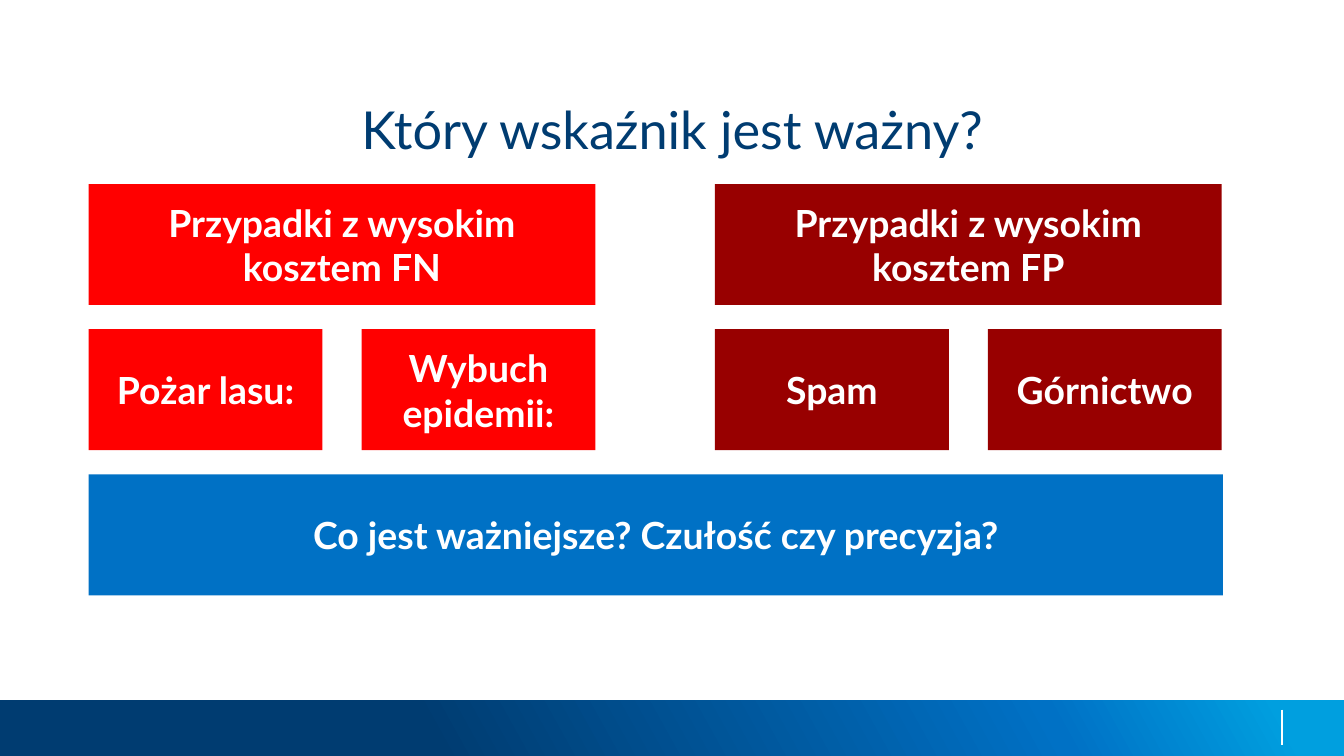
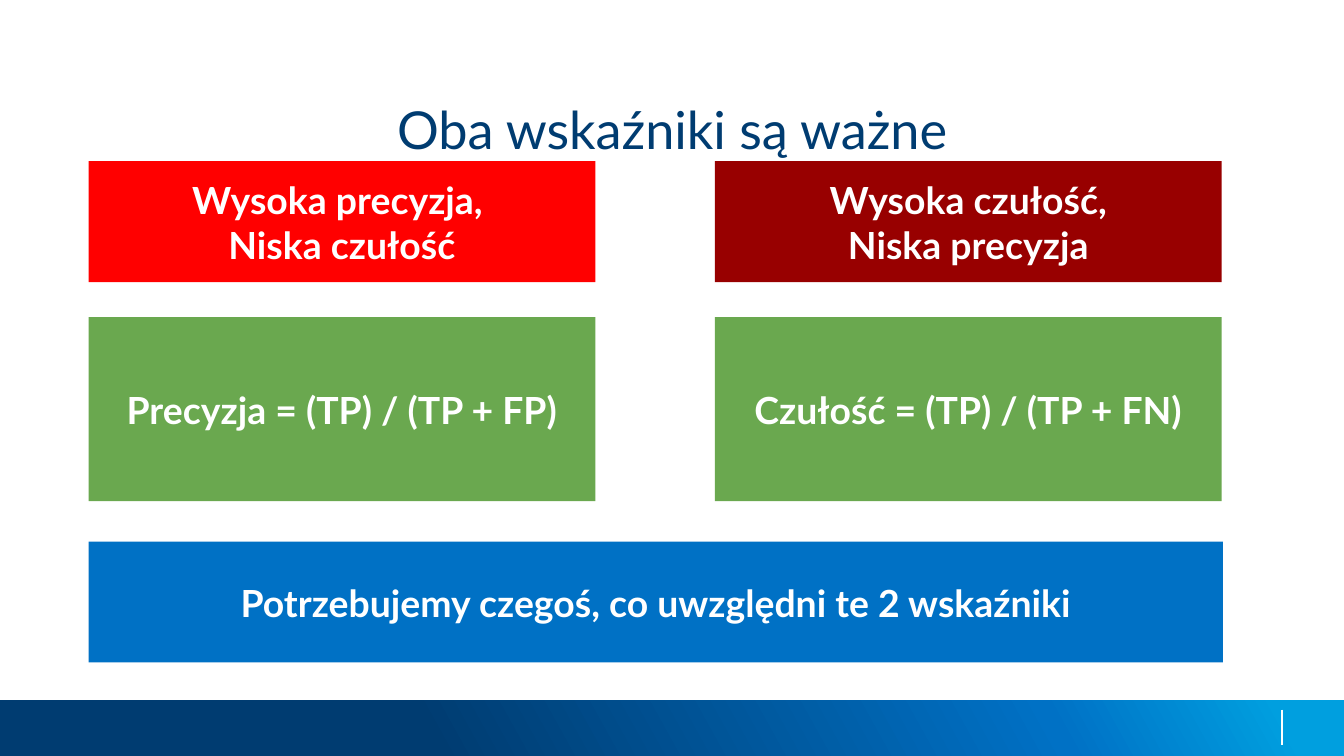
"""Build two slides about choosing between recall and precision."""
from copy import deepcopy
from dataclasses import dataclass

from lxml import etree
from pptx import Presentation
from pptx.dml.color import RGBColor
from pptx.enum.shapes import MSO_CONNECTOR, MSO_SHAPE
from pptx.enum.text import MSO_ANCHOR, MSO_AUTO_SIZE, PP_ALIGN
from pptx.oxml.ns import qn
from pptx.util import Inches, Pt

RECT = MSO_SHAPE.RECTANGLE
STRAIGHT = MSO_CONNECTOR.STRAIGHT
CENTER = PP_ALIGN.CENTER
MIDDLE, BOTTOM = MSO_ANCHOR.MIDDLE, MSO_ANCHOR.BOTTOM
NO_FIT = MSO_AUTO_SIZE.NONE

COLORS = {
    "navy": "003C71",
    "blue": "0071C5",
    "sky": "009FDF",
    "red": "FF0000",
    "maroon": "980000",
    "green": "6AA84F",
    "white": "FFFFFF",
}
BAND_STOPS = (("navy", 0.32), ("blue", 0.78), ("sky", 0.95))
FONT = "Lato"
TITLE_FONT = {"name": FONT, "size": Pt(28), "bold": False}
BOX_FONT = {"name": FONT, "size": Pt(20), "bold": True}
FRAME = {"word_wrap": True, "auto_size": NO_FIT}
INSETS = ("margin_left", "margin_top", "margin_right", "margin_bottom")

SLIDE_W = Inches(10)
SLIDE_H = SLIDE_W * 9 // 16
LEFT, RIGHT = 0.66, 5.32
COLUMN_W, HALF_W, FULL_W = 3.77, 1.74, 8.44
HALF_STEP = COLUMN_W - HALF_W
BOX_H, FORMULA_H = 0.9, 1.37
METRIC_TOP, METRIC_STEP = 1.37, 1.08


@dataclass(frozen=True)
class Box:
    """A filled rectangle with a centred label, measured in inches."""
    text: str
    color: str
    left: float
    top: float
    width: float = COLUMN_W
    height: float = BOX_H


@dataclass(frozen=True)
class Page:
    """A slide title and its boxes."""
    title: str
    boxes: tuple[Box, ...]


EXAMPLES_TOP = METRIC_TOP + METRIC_STEP
QUESTION_TOP = METRIC_TOP + 2 * METRIC_STEP
PAGES = (
    Page("Który wskaźnik jest ważny?", (
        Box("Przypadki z wysokim kosztem FN", "red", LEFT, METRIC_TOP),
        Box("Przypadki z wysokim kosztem FP", "maroon", RIGHT, METRIC_TOP),
        Box("Pożar lasu:", "red", LEFT, EXAMPLES_TOP, HALF_W),
        Box("Wybuch epidemii:", "red", LEFT + HALF_STEP, EXAMPLES_TOP, HALF_W),
        Box("Spam", "maroon", RIGHT, EXAMPLES_TOP, HALF_W),
        Box("Górnictwo", "maroon", RIGHT + HALF_STEP, EXAMPLES_TOP, HALF_W),
        Box("Co jest ważniejsze? Czułość czy precyzja?", "blue",
            LEFT, QUESTION_TOP, FULL_W),
    )),
    Page("Oba wskaźniki są ważne", (
        Box("Wysoka precyzja, \nNiska czułość", "red", LEFT, 1.2),
        Box("Wysoka czułość,\nNiska precyzja", "maroon", RIGHT, 1.2),
        Box("Precyzja = (TP) / (TP + FP)", "green", LEFT, 2.36, height=FORMULA_H),
        Box("Czułość = (TP) / (TP + FN)", "green", RIGHT, 2.36, height=FORMULA_H),
        Box("Potrzebujemy czegoś, co uwzględni te 2 wskaźniki", "blue",
            LEFT, 4.03, FULL_W),
    )),
)


def rgb(name: str) -> RGBColor:
    """Return a named colour."""
    return RGBColor.from_string(COLORS[name])


def set_all(target, values: dict) -> None:
    """Set every attribute named in the dict."""
    for name, value in values.items():
        setattr(target, name, value)


def write_text(tf, text: str, font: dict, color: str, anchor) -> None:
    """Fill a text frame with centred paragraphs, one per line."""
    set_all(tf, FRAME | {"vertical_anchor": anchor})
    set_all(tf, dict.fromkeys(INSETS, Inches(0.1)))
    tf.text = text
    for p in tf.paragraphs:
        p.alignment = CENTER
        for r in p.runs:
            set_all(r.font, font)
            r.font.color.rgb = rgb(color)


def add_rect(s, left: float, top: float, width: float, height: float):
    """Add a rectangle without outline or shadow."""
    sp = s.shapes.add_shape(RECT, Inches(left), Inches(top), Inches(width), Inches(height))
    sp.shadow.inherit = False
    sp.line.fill.background()
    return sp


def add_band(s) -> None:
    """Draw the gradient footer band and its white tick."""
    band = add_rect(s, 0, 5.21, 10, 0.42)
    band.fill.gradient()
    band.fill.gradient_angle = 29
    stops = band._element.spPr.find(qn("a:gradFill")).find(qn("a:gsLst"))
    stops.append(deepcopy(stops[-1]))
    for stop, (color, position) in zip(band.fill.gradient_stops, BAND_STOPS):
        stop.color.rgb = rgb(color)
        stop.position = position

    tick = s.shapes.add_connector(
        STRAIGHT, Inches(9.54), Inches(5.28), Inches(9.54), Inches(5.54))
    tick.line.color.rgb = rgb("white")
    tick.line.width = Pt(0.75)
    etree.SubElement(tick._element.spPr, qn("a:effectLst"))


def add_title(s, text: str) -> None:
    """Place and format the title placeholder."""
    sp = s.shapes.title
    set_all(sp, {"left": Inches(0.5), "top": Inches(0.34),
                 "width": Inches(9), "height": Inches(0.95)})
    write_text(sp.text_frame, text, TITLE_FONT, "navy", BOTTOM)


def add_box(s, box: Box) -> None:
    """Draw one labelled box."""
    sp = add_rect(s, box.left, box.top, box.width, box.height)
    sp.fill.solid()
    sp.fill.fore_color.rgb = rgb(box.color)
    write_text(sp.text_frame, box.text, BOX_FONT, "white", MIDDLE)


def main() -> None:
    """Build and save the presentation."""
    prs = Presentation()
    prs.slide_width, prs.slide_height = SLIDE_W, SLIDE_H
    title_only = prs.slide_layouts.get_by_name("Title Only")
    for page in PAGES:
        s = prs.slides.add_slide(title_only)
        add_band(s)
        add_title(s, page.title)
        for box in page.boxes:
            add_box(s, box)
    prs.save("out.pptx")


if __name__ == "__main__":
    main()
